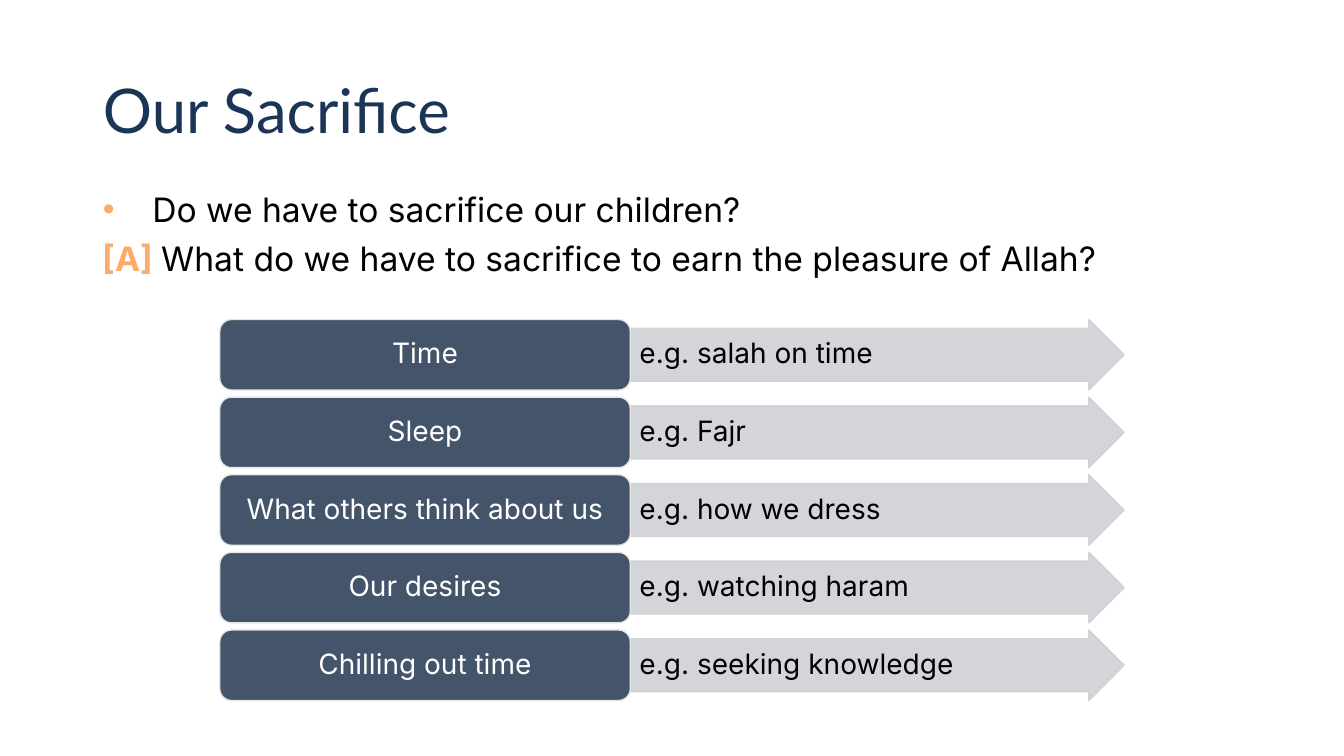
from dataclasses import dataclass

from lxml.etree import SubElement
from pptx import Presentation
from pptx.dml.color import RGBColor
from pptx.enum.shapes import MSO_SHAPE as Shape
from pptx.enum.text import MSO_ANCHOR as Anchor, MSO_AUTO_SIZE as AutoSize, PP_ALIGN as Align
from pptx.oxml.ns import qn
from pptx.util import Inches, Pt


@dataclass(frozen=True)
class Theme:
    heading_font: str = "Lato"
    body_font: str = "Inter"
    title_size: int = 44
    body_size: int = 24
    row_size: int = 20
    navy: str = "1C3557"
    orange: str = "FAAC69"
    slate: str = "44546A"
    outline: str = "E7E6E6"
    grey: str = "CFD1D4"
    black: str = "000000"
    white: str = "FFFFFF"


THEME = Theme()
SACRIFICES = [
    ("Time", "e.g. salah on time"),
    ("Sleep", "e.g. Fajr"),
    ("What others think about us", "e.g. how we dress"),
    ("Our desires", "e.g. watching haram"),
    ("Chilling out time", "e.g. seeking knowledge"),
]


def rgb(color):
    return RGBColor.from_string(color)


def place(shape, box):
    shape.left, shape.top, shape.width, shape.height = map(Inches, box)


def style(font, name, size, color):
    font.name, font.size, font.bold = name, Pt(size), False
    font.color.rgb = rgb(color)


def set_bullet(paragraph, indent=0, char=None):
    """Give the paragraph a hanging orange bullet, or none; call before setting its font."""
    props = paragraph._p.get_or_add_pPr()
    props.set("marL", str(Inches(indent)))
    props.set("indent", str(-Inches(indent)))
    if char:
        color = SubElement(props, qn("a:buClr"))
        SubElement(color, qn("a:srgbClr"), val=THEME.orange)
        SubElement(props, qn("a:buFont"), typeface="Arial")
        SubElement(props, qn("a:buChar"), char=char)
    else:
        SubElement(props, qn("a:buNone"))


def add_title(slide, box):
    title = slide.shapes.title
    place(title, box)
    frame = title.text_frame
    frame.text = "Our Sacrifice"
    frame.word_wrap, frame.auto_size = True, AutoSize.NONE
    frame.vertical_anchor = Anchor.MIDDLE
    heading = frame.paragraphs[0]
    heading.alignment, heading.line_spacing = Align.LEFT, 0.9
    style(heading.font, THEME.heading_font, THEME.title_size, THEME.navy)


def add_questions(slide, box):
    body = slide.placeholders[1]
    place(body, box)
    frame = body.text_frame
    frame.word_wrap, frame.auto_size = True, AutoSize.NONE
    children = frame.paragraphs[0]
    pleasure = frame.add_paragraph()
    children.line_spacing, pleasure.line_spacing = 1.5, 0.9
    for question in (children, pleasure):
        question.space_before = Pt(10)
    set_bullet(children, 0.49, "•")
    set_bullet(pleasure)
    children.add_run().text = "Do we have to sacrifice our children?"
    style(children.font, THEME.body_font, THEME.body_size, THEME.black)
    for text, color in (
        ("[A] ", THEME.orange),
        ("What do we have to sacrifice to earn the pleasure of Allah?", THEME.black),
    ):
        run = pleasure.add_run()
        run.text = text
        style(run.font, THEME.body_font, THEME.body_size, color)
        run.font.bold = color == THEME.orange


def add_block(slide, preset, box, text, fill, line, color, align, inset):
    block = slide.shapes.add_shape(preset, *map(Inches, box))
    block.shadow.inherit = False
    block.fill.solid()
    block.fill.fore_color.rgb = rgb(fill)
    block.line.color.rgb = rgb(line)
    block.line.width = Pt(1)
    frame = block.text_frame
    frame.text = text
    frame.word_wrap, frame.vertical_anchor = True, Anchor.MIDDLE
    frame.margin_left = frame.margin_right = Inches(inset)
    frame.margin_top = frame.margin_bottom = Inches(0.01)
    label = frame.paragraphs[0]
    label.alignment, label.line_spacing = align, 0.9
    style(label.font, THEME.body_font, THEME.row_size, color)
    return block


def add_sacrifice_rows(slide, box):
    left, top, width, height = box
    row_height, label_share = 0.7, 0.454
    pitch = (height - row_height) / (len(SACRIFICES) - 1)
    label_width = width * label_share
    for index, (sacrifice, example) in enumerate(SACRIFICES):
        y = top + index * pitch
        arrow = add_block(
            slide, Shape.RIGHT_ARROW, (left + label_width, y, width - label_width, row_height),
            example, THEME.grey, THEME.grey, THEME.black, Align.LEFT, 0.09)
        arrow.adjustments[0], arrow.adjustments[1] = 0.75, 0.5
        for color in arrow._element.spPr.iter(qn("a:srgbClr")):
            SubElement(color, qn("a:alpha"), val="90000")
        add_block(
            slide, Shape.ROUNDED_RECTANGLE, (left, y, label_width, row_height),
            sacrifice, THEME.slate, THEME.outline, THEME.white, Align.CENTER, 0.12)


def main():
    deck = Presentation()
    deck.slide_width, deck.slide_height = Inches(13.33), Inches(7.5)
    slide = deck.slides.add_slide(deck.slide_layouts[1])
    add_title(slide, (0.92, 0.4, 11.5, 1.45))
    add_questions(slide, (0.92, 1.62, 11.5, 4.98))
    add_sacrifice_rows(slide, (2.18, 3.17, 8.97, 3.78))
    deck.save("out.pptx")


if __name__ == "__main__":
    main()
